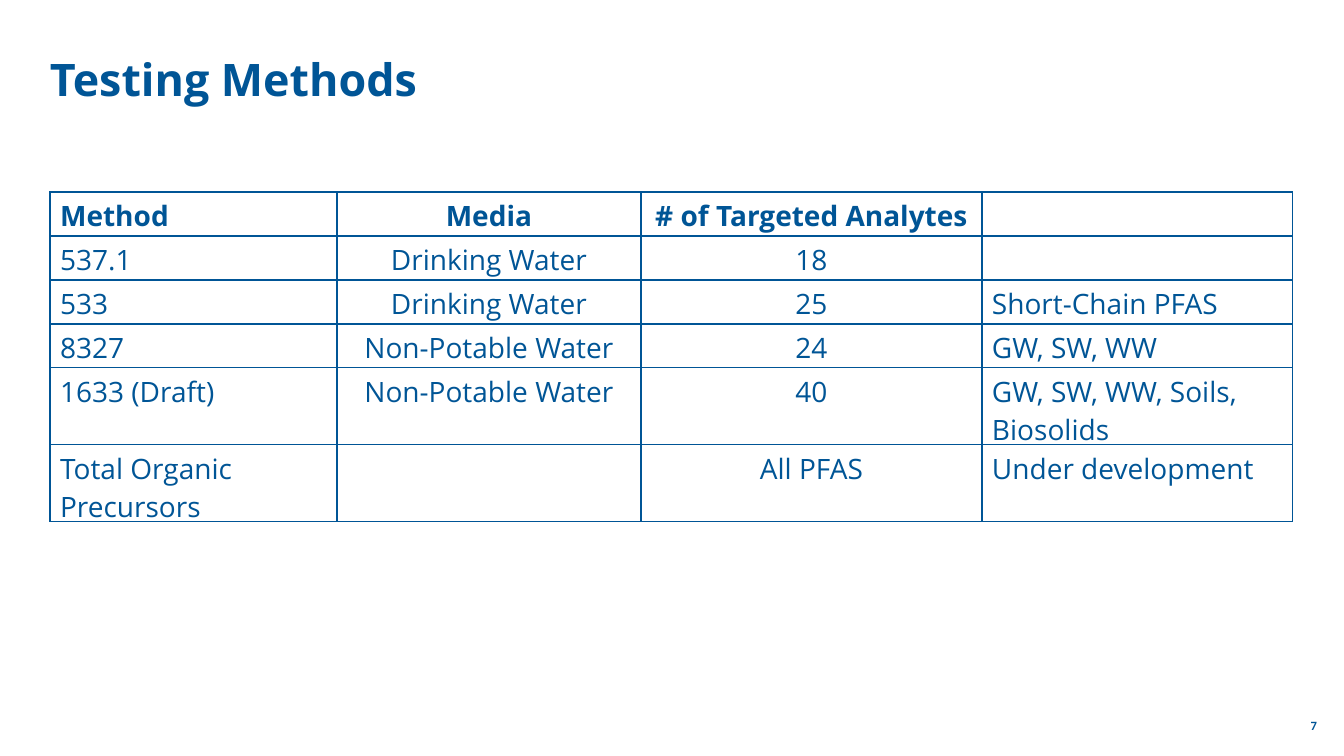
import dataclasses

import pptx
import pptx.dml.color
import pptx.enum.text
import pptx.oxml
import pptx.oxml.ns
import pptx.util

ALIGN = pptx.enum.text.PP_ALIGN
ANCHOR = pptx.enum.text.MSO_ANCHOR


@dataclasses.dataclass(frozen=True)
class Theme:
    blue: str = "005596"
    body_font: str = "Open Sans"
    number_font: str = "Calibri"
    title_size: int = 32
    table_size: int = 20
    number_size: int = 9
    border_pt: int = 1


def px(length):
    """Convert pixels, at 100.8 to the inch, to EMU."""
    return pptx.util.Emu(round(length * 914400 / 100.8))


class SlideBuilder:
    def __init__(self, slide, theme):
        self.slide = slide
        self.theme = theme

    def style(self, paragraph, size, font_name, bold, align):
        paragraph.alignment = align
        for run in paragraph.runs:
            run.font.size = pptx.util.Pt(size)
            run.font.name = font_name
            run.font.bold = bold
            run.font.color.rgb = pptx.dml.color.RGBColor.from_string(self.theme.blue)

    def text(self, wording, box, size, font_name, align=ALIGN.LEFT,
             anchor=ANCHOR.TOP, wrap=True, line_spacing=None):
        frame = self.slide.shapes.add_textbox(*map(px, box)).text_frame
        frame.margin_left = frame.margin_right = frame.margin_top = frame.margin_bottom = 0
        frame.word_wrap = wrap
        frame.vertical_anchor = anchor
        frame.text = wording
        paragraph = frame.paragraphs[0]
        if line_spacing:
            paragraph.line_spacing = line_spacing
        self.style(paragraph, size, font_name, True, align)

    def borders(self, cell):
        properties = cell._tc.get_or_add_tcPr()
        width = pptx.util.Pt(self.theme.border_pt)
        for side in ("lnL", "lnR", "lnT", "lnB"):
            properties.append(pptx.oxml.parse_xml(
                f'<a:{side} {pptx.oxml.ns.nsdecls("a")} w="{width}"><a:solidFill>'
                f'<a:srgbClr val="{self.theme.blue}"/></a:solidFill></a:{side}>'))

    def table(self, rows, left, top, widths, heights, aligns):
        box = (left, top, sum(widths), sum(heights))
        grid = self.slide.shapes.add_table(len(rows), len(widths), *map(px, box)).table
        grid.first_row = grid.horz_banding = False
        for column, width in zip(grid.columns, widths):
            column.width = px(width)
        for row, height in zip(grid.rows, heights):
            row.height = px(height)
        for r, row in enumerate(rows):
            for c, wording in enumerate(row):
                cell = grid.cell(r, c)
                self.borders(cell)
                cell.fill.background()
                cell.margin_top, cell.margin_bottom = px(5), 0
                cell.text = wording
                self.style(cell.text_frame.paragraphs[0], self.theme.table_size,
                           self.theme.body_font, r == 0, aligns[c])


def main():
    deck = pptx.Presentation()
    deck.slide_width, deck.slide_height = px(1344), px(756)
    theme = Theme()
    builder = SlideBuilder(deck.slides.add_slide(deck.slide_layouts[6]), theme)

    # Title
    builder.text("Testing Methods", (50, 66, 1243, 126), theme.title_size,
                 theme.body_font, line_spacing=0.7)

    # Slide number
    builder.text("7", (1302, 718, 15, 15), theme.number_size, theme.number_font,
                 align=ALIGN.RIGHT, anchor=ANCHOR.MIDDLE, wrap=False)

    # Table of testing methods
    methods = [
        ("Method", "Media", "# of Targeted Analytes", ""),
        ("537.1", "Drinking Water", "18", ""),
        ("533", "Drinking Water", "25", "Short-Chain PFAS"),
        ("8327", "Non-Potable Water", "24", "GW, SW, WW"),
        ("1633 (Draft)", "Non-Potable Water", "40", "GW, SW, WW, Soils, Biosolids"),
        ("Total Organic Precursors", "", "All PFAS", "Under development"),
    ]
    builder.table(methods, 50, 192, widths=(287, 304, 341, 311),
                  heights=[44] * 4 + [77] * 2,
                  aligns=(ALIGN.LEFT, ALIGN.CENTER, ALIGN.CENTER, ALIGN.LEFT))

    deck.save("out.pptx")


if __name__ == "__main__":
    main()
